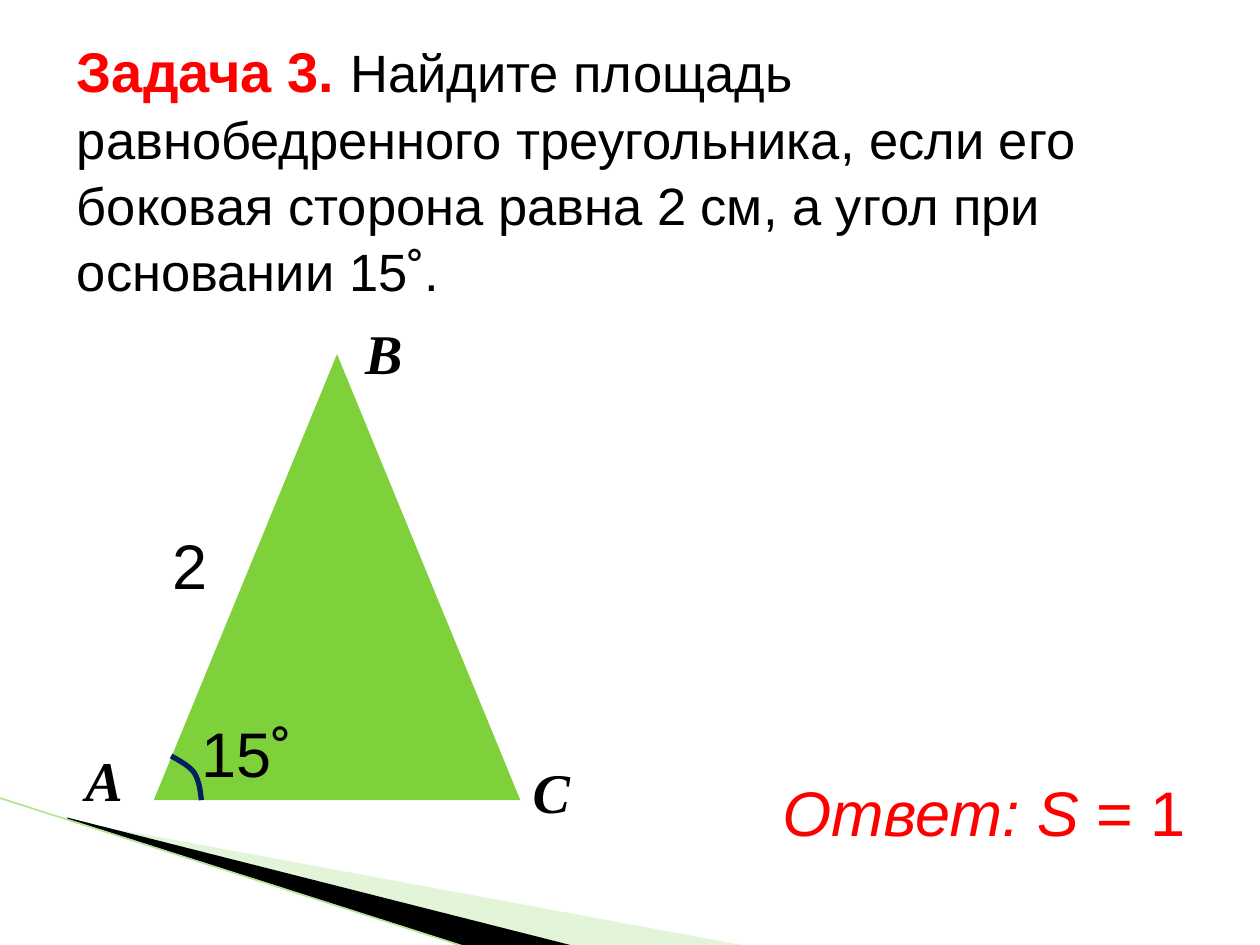
from lxml import etree
from pptx import Presentation
from pptx.dml.color import RGBColor
from pptx.enum.shapes import MSO_CONNECTOR, MSO_SHAPE
from pptx.enum.text import MSO_ANCHOR, PP_ALIGN
from pptx.oxml.ns import qn
from pptx.util import Cm, Pt

TRIANGLE = MSO_SHAPE.ISOSCELES_TRIANGLE
STRAIGHT = MSO_CONNECTOR.STRAIGHT
TOP, MIDDLE = MSO_ANCHOR.TOP, MSO_ANCHOR.MIDDLE
LEFT, CENTER = PP_ALIGN.LEFT, PP_ALIGN.CENTER
RED, BLACK = "FF0000", "000000"
CURVE_STEPS = 12

presentation = Presentation()
presentation.slide_width = Cm(25.4)
presentation.slide_height = Cm(19.05)
slide = presentation.slides.add_slide(presentation.slide_layouts[6])


def add_text(runs, left, top, width, height, font="Arial", color=BLACK,
             wrap=False, anchor=TOP, align=LEFT, spacing=1.0):
    shape = slide.shapes.add_textbox(Cm(left), Cm(top), Cm(width), Cm(height))
    frame = shape.text_frame
    frame.word_wrap = wrap
    frame.vertical_anchor = anchor
    paragraph = frame.paragraphs[0]
    paragraph.alignment = align
    paragraph.line_spacing = spacing
    for text, size, style in runs:
        run = paragraph.add_run()
        run.text = text
        run.font.name = font
        run.font.size = Pt(size)
        run.font.bold = "b" in style
        run.font.italic = "i" in style
        run.font.color.rgb = RGBColor.from_string(style.get("color", color))


def add_outline(points, close=True, fill=None, line=None, width=0):
    corners = [(Cm(x), Cm(y)) for x, y in points]
    builder = slide.shapes.build_freeform(*corners[0])
    builder.add_line_segments(corners[1:], close=close)
    shape = builder.convert_to_shape()
    shape.shadow.inherit = False
    if fill:
        shape.fill.solid()
        shape.fill.fore_color.rgb = RGBColor.from_string(fill)
    else:
        shape.fill.background()
    if line:
        shape.line.color.rgb = RGBColor.from_string(line)
        shape.line.width = Pt(width)
    else:
        shape.line.fill.background()
    return shape


pale_wedge = add_outline(
    [(1.4, 16.54), (15.11, 19.08), (11.58, 19.08), (1.4, 16.51)], fill="B8E7A1")
pale_color = pale_wedge._element.spPr.find(qn("a:solidFill"))[0]
etree.SubElement(pale_color, qn("a:alpha"), val="40000")
add_outline([(1.35, 16.48), (11.61, 19.08), (9.45, 19.1), (1.37, 16.51)], fill=BLACK)

edge = slide.shapes.add_connector(STRAIGHT, Cm(-0.03), Cm(16.08), Cm(9.42), Cm(19.1))
edge.line.color.rgb = RGBColor.from_string("B1E399")
edge.line.width = Pt(0.95)
etree.SubElement(edge._element.spPr, qn("a:effectLst"))

add_text([("Задача 3. ", 32, {"b": True, "color": RED}),
          ("Найдите площадь равнобедренного треугольника, если его боковая "
           "сторона равна 2 см, а угол при основании 15˚.", 30, {})],
         1.3, 1.37, 22.86, 4.01, wrap=True, anchor=MIDDLE, spacing=1.05)

triangle = slide.shapes.add_shape(TRIANGLE, Cm(3.1), Cm(7.14), Cm(7.39), Cm(8.99))
triangle.shadow.inherit = False
triangle.fill.solid()
triangle.fill.fore_color.rgb = RGBColor.from_string("7FD13B")
triangle.line.fill.background()

add_text([("2", 36, {}), (" ", 18, {})], 3.23, 10.49, 1.4, 1.8)
add_text([("15˚", 36, {})], 3.81, 14.27, 2.36, 1.8)

angle_curves = [
    [(3.45, 15.24), (3.63, 15.34), (3.81, 15.44), (3.91, 15.57)],
    [(3.91, 15.57), (4.01, 15.72), (4.04, 15.93), (4.06, 16.13)],
]
angle_points = [angle_curves[0][0]]
for curve in angle_curves:
    for step in range(1, CURVE_STEPS + 1):
        t = step / CURVE_STEPS
        weights = ((1 - t) ** 3, 3 * t * (1 - t) ** 2, 3 * t ** 2 * (1 - t), t ** 3)
        angle_points.append(tuple(
            sum(weight * point[axis] for weight, point in zip(weights, curve))
            for axis in (0, 1)))
add_outline(angle_points, close=False, line="002060", width=3)

for vertex, left, top, width in [("B", 7.11, 6.3, 1.27), ("С", 10.49, 15.14, 1.27),
                                 ("A", 1.47, 14.91, 1.63)]:
    add_text([(vertex, 32, {"b": True, "i": True})], left, top, width, 1.63,
             font="Times New Roman", wrap=vertex == "A")

add_text([("Ответ: S", 36, {"i": True}), (" = 1", 36, {})],
         15.47, 15.47, 8.74, 1.8, color=RED, align=CENTER)

presentation.save("out.pptx")
